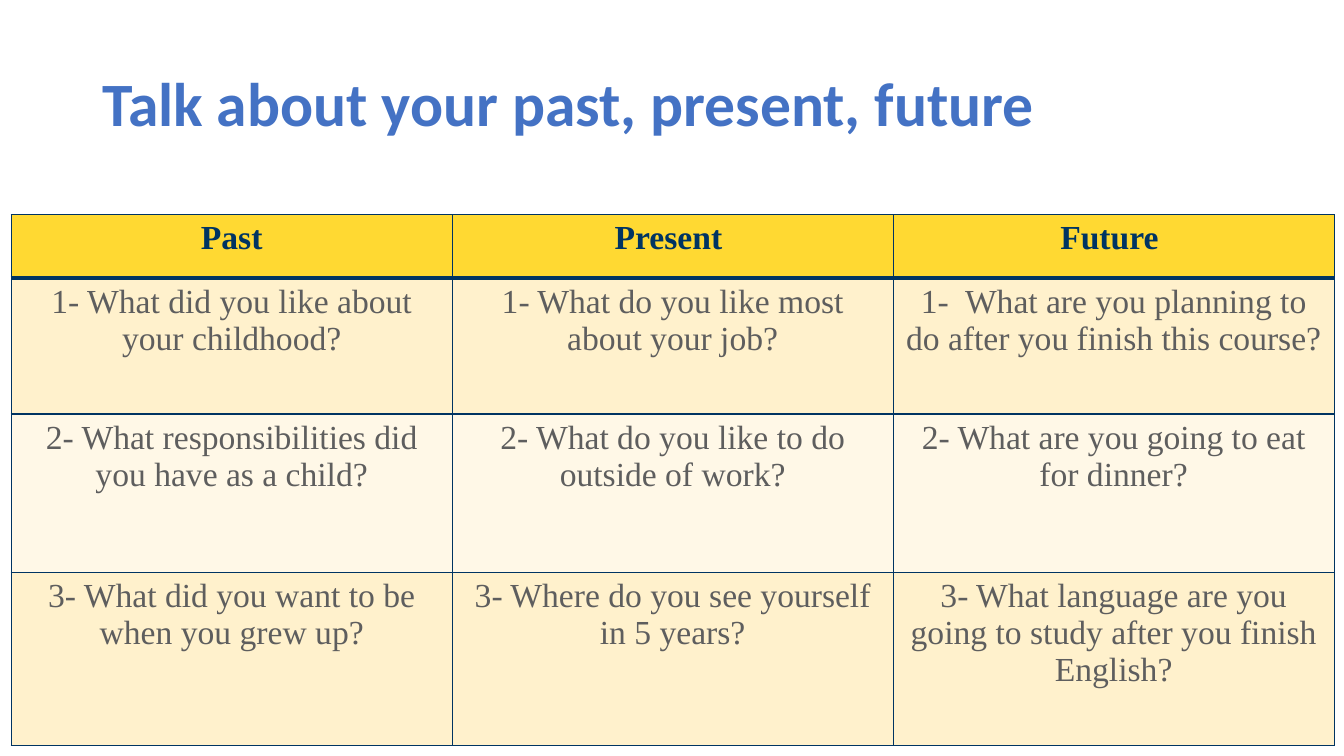
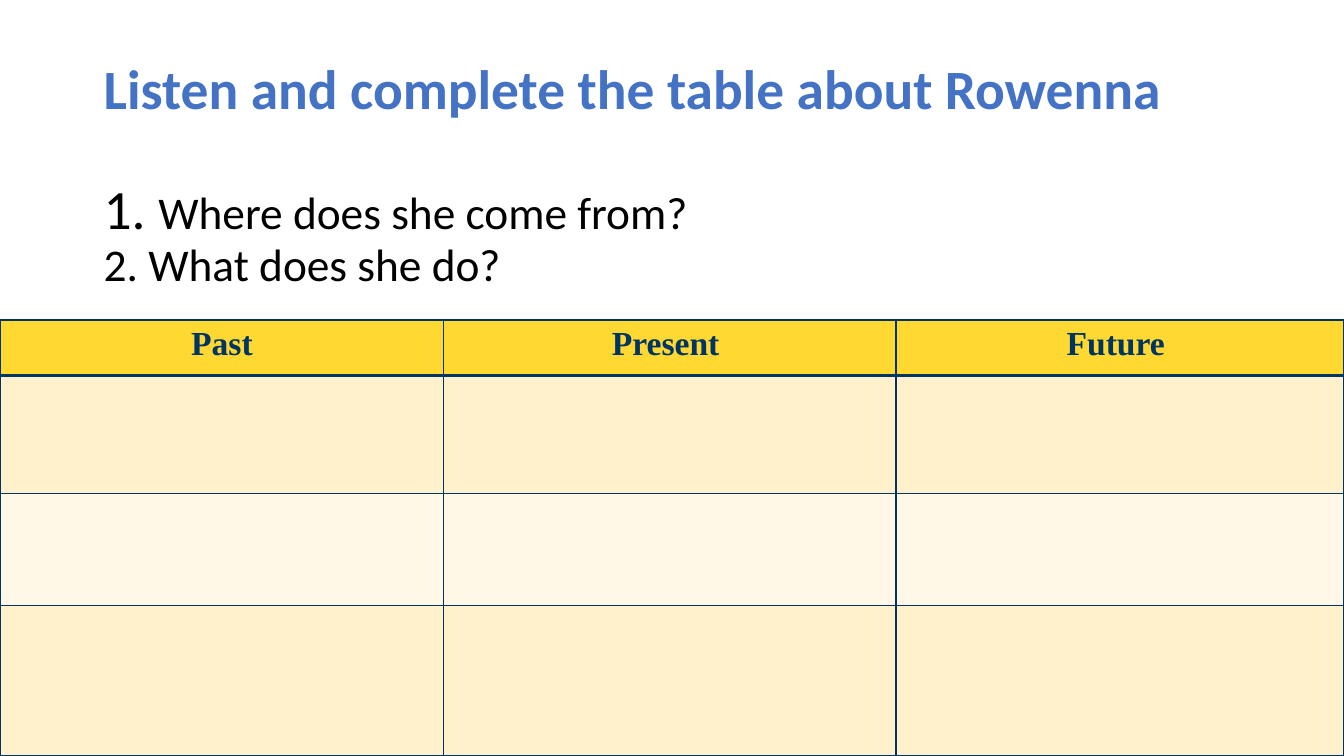
"""Build two English-lesson slides on past, present and future."""
import pptx
import pptx.dml.color
import pptx.enum.text
import pptx.oxml
import pptx.oxml.ns
import pptx.util
from lxml import etree

Pt = pptx.util.Pt
NAVY, GOLD, CREAM, IVORY = "003462", "FFD932", "FFF1CC", "FFF8E7"
BLUE, BLACK, GREY = "4472C4", "000000", "5E5E5E"
TENSES = ["Past", "Present ", "Future "]
ROW_FILLS = [GOLD, CREAM, IVORY, CREAM]
LINE_GAP = 43.5


def style_run(run, font, size, color, bold=False):
    """Set the look of one run."""
    run.font.name = font
    run.font.size = Pt(size)
    run.font.bold = bold
    run.font.color.rgb = pptx.dml.color.RGBColor.from_string(color)


def add_border(cell, side, width):
    """Draw one navy edge of a table cell."""
    qn = pptx.oxml.ns.qn
    edge = etree.SubElement(cell._tc.get_or_add_tcPr(), qn(f"a:ln{side}"), w=str(Pt(width)))
    paint = etree.SubElement(edge, qn("a:solidFill"))
    etree.SubElement(paint, qn("a:srgbClr"), val=NAVY)


lessons = [
    {
        "heading_box": (66, 24, 828, 104),
        "heading": [[("Talk about your past, present, future", 44, BLUE, True)]],
        "grid_origin": (8, 153.4),
        "columns": [315, 315, 315],
        "rows": [45.4, 97, 113, 123.8],
        "questions": [
            ["1- What did you like about your childhood?",
             "1- What do you like most about your job?",
             "1-  What are you planning to do after you finish this course?"],
            ["2- What responsibilities did you have as a child?",
             "2- What do you like to do outside of work?",
             "2- What are you going to eat for dinner?"],
            ["3- What did you want to be when you grew up?",
             "3- Where do you see yourself in 5 years?",
             "3- What language are you going to study after you finish English?"],
        ],
    },
    {
        "heading_box": (67, 39, 828, 173.4),
        "heading": [
            [("Listen and complete the table about Rowenna", 39.6, BLUE, True)],
            [("1. ", 39.6, BLACK, False), ("Where does she come from?", 32.4, BLACK, False)],
            [("2. What does she do?", 32.4, BLACK, False)],
        ],
        "grid_origin": (0, 228.6),
        "columns": [317, 323, 320],
        "rows": [39.6, 84.2, 80, 107.6],
        "questions": [[""] * 3] * 3,
    },
]

deck = pptx.Presentation()
deck.slide_width, deck.slide_height = Pt(960), Pt(540)

for lesson in lessons:
    slide = deck.slides.add_slide(deck.slide_layouts[6])

    heading = slide.shapes.add_textbox(*map(Pt, lesson["heading_box"])).text_frame
    heading.word_wrap = True
    heading.vertical_anchor = pptx.enum.text.MSO_ANCHOR.MIDDLE
    for index, pieces in enumerate(lesson["heading"]):
        line = heading.add_paragraph() if index else heading.paragraphs[0]
        line.line_spacing = 0.9
        line.space_before = Pt(LINE_GAP if index == 1 else 0)
        for words, size, color, bold in pieces:
            run = line.add_run()
            run.text = words
            style_run(run, "Calibri", size, color, bold)

    columns, rows = lesson["columns"], lesson["rows"]
    left, top = lesson["grid_origin"]
    grid = slide.shapes.add_table(
        len(rows), len(columns), Pt(left), Pt(top), Pt(sum(columns)), Pt(sum(rows))
    ).table
    grid.first_row = grid.horz_banding = False
    for column, width in zip(grid.columns, columns):
        column.width = Pt(width)

    for r, words_in_row in enumerate([TENSES] + lesson["questions"]):
        grid.rows[r].height = Pt(rows[r])
        for c, words in enumerate(words_in_row):
            cell = grid.cell(r, c)
            edges = {"L": 1, "R": 1, "T": 3 if r == 1 else 1, "B": 3 if r == 0 else 1}
            for side, width in edges.items():
                add_border(cell, side, width)
            cell.fill.solid()
            cell.fill.fore_color.rgb = pptx.dml.color.RGBColor.from_string(ROW_FILLS[r])
            if words:
                cell.text_frame.text = words
                entry = cell.text_frame.paragraphs[0]
                entry.alignment = pptx.enum.text.PP_ALIGN.CENTER
                style_run(entry.runs[0], "Times New Roman", 24, GREY if r else NAVY, r == 0)

deck.save("out.pptx")
